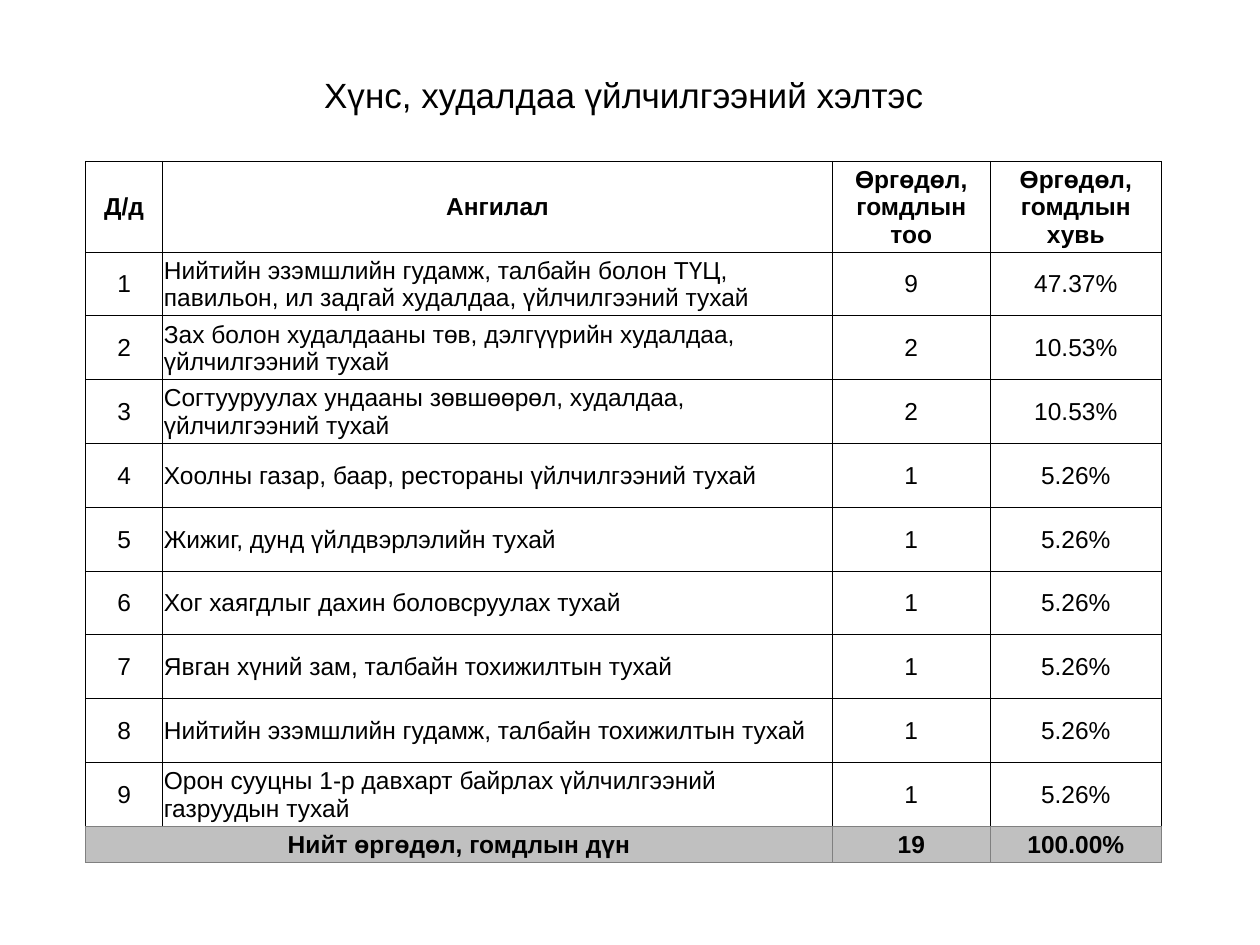
import dataclasses

import lxml.etree
import pptx
import pptx.dml.color
import pptx.enum.text
import pptx.oxml.ns
import pptx.util

Inches = pptx.util.Inches
Align = pptx.enum.text.PP_ALIGN
Anchor = pptx.enum.text.MSO_ANCHOR


@dataclasses.dataclass(frozen=True)
class Theme:
    font: str = "Arial"
    ink: str = "000000"
    paper: str = "FFFFFF"
    band: str = "C0C0C0"
    edge: str = "808080"
    title: int = 20
    body: int = 14
    line: float = 0.5


THEME = Theme()
WIDTH, HEIGHT = 10, 7.5
TITLE = "Хүнс, худалдаа үйлчилгээний хэлтэс "
HEADS = ("Д/д", "Ангилал", "Өргөдөл, гомдлын тоо", "Өргөдөл, гомдлын хувь")
TOTAL = "Нийт өргөдөл, гомдлын дүн"
TOPICS = (
    ("Нийтийн эзэмшлийн гудамж, талбайн болон ТҮЦ, павильон, ил задгай "
     "худалдаа, үйлчилгээний тухай", 9),
    ("Зах болон худалдааны төв, дэлгүүрийн худалдаа, үйлчилгээний тухай", 2),
    ("Согтууруулах ундааны зөвшөөрөл, худалдаа, үйлчилгээний тухай", 2),
    ("Хоолны газар, баар, рестораны үйлчилгээний тухай", 1),
    ("Жижиг, дунд үйлдвэрлэлийн тухай", 1),
    ("Хог хаягдлыг дахин боловсруулах тухай", 1),
    ("Явган хүний зам, талбайн тохижилтын тухай", 1),
    ("Нийтийн эзэмшлийн гудамж, талбайн тохижилтын тухай", 1),
    ("Орон сууцны 1-р давхарт байрлах үйлчилгээний газруудын тухай", 1),
)
COLS = (0.61, 5.31, 1.25, 1.36)
HEAD_ROW, TOTAL_ROW = 0.72, 0.29


def write(frame, text, size, bold=False, align=Align.CENTER):
    frame.text = text
    par = frame.paragraphs[0]
    par.alignment = align
    for run in par.runs:
        run.font.name = THEME.font
        run.font.size = pptx.util.Pt(size)
        run.font.bold = bold
        run.font.color.rgb = pptx.dml.color.RGBColor.from_string(THEME.ink)


def border(cell, color, base):
    """Draw all four sides in color, except the bottom one in base."""
    props = cell._tc.get_or_add_tcPr()
    qn = pptx.oxml.ns.qn
    for side in "LRTB":
        line = lxml.etree.SubElement(props, qn("a:ln" + side))
        line.set("w", str(pptx.util.Pt(THEME.line)))
        fill = lxml.etree.SubElement(line, qn("a:solidFill"))
        tone = lxml.etree.SubElement(fill, qn("a:srgbClr"))
        tone.set("val", base if side == "B" else color)


def style(cell, fill, color, base):
    cell.margin_left = cell.margin_right = cell.margin_top = Inches(0.01)
    cell.margin_bottom = 0
    cell.vertical_anchor = Anchor.MIDDLE
    border(cell, color, base)
    cell.fill.solid()
    cell.fill.fore_color.rgb = pptx.dml.color.RGBColor.from_string(fill)


def add_title(slide, left, top, width, height):
    box = slide.shapes.add_textbox(*map(Inches, (left, top, width, height)))
    frame = box.text_frame
    frame.word_wrap = True
    frame.vertical_anchor = Anchor.MIDDLE
    write(frame, TITLE, THEME.title)
    frame.paragraphs[0].line_spacing = 0.9


def list_rows():
    """Return the heads, the numbered topics with their shares, and the total."""
    total = sum(count for _, count in TOPICS)
    body = [(str(num), topic, str(count), f"{count / total:.2%}")
            for num, (topic, count) in enumerate(TOPICS, 1)]
    return [HEADS, *body, (TOTAL, "", str(total), f"{1:.2%}")]


def add_grid(slide, left, top, width, height):
    rows = list_rows()
    last = len(rows) - 1
    box = map(Inches, (left, top, width, height))
    grid = slide.shapes.add_table(len(rows), len(COLS), *box).table
    grid.first_row = grid.horz_banding = False

    for col, share in zip(grid.columns, COLS):
        col.width = Inches(width * share / sum(COLS))
    step = (height - HEAD_ROW - TOTAL_ROW) / len(TOPICS)
    tall = [HEAD_ROW] + [step] * len(TOPICS) + [TOTAL_ROW]
    for row, size in zip(grid.rows, tall):
        row.height = Inches(size)

    grid.cell(last, 0).merge(grid.cell(last, 1))
    for r, texts in enumerate(rows):
        fill = THEME.band if r == last else THEME.paper
        color = THEME.edge if r == last else THEME.ink
        base = THEME.edge if r >= last - 1 else THEME.ink
        for c, text in enumerate(texts):
            cell = grid.cell(r, c)
            style(cell, fill, color, base)
            if cell.is_spanned:
                continue
            topic = c == 1 and 0 < r < last
            write(cell.text_frame, text, THEME.body, bold=r in (0, last),
                  align=Align.LEFT if topic else Align.CENTER)


def main():
    deck = pptx.Presentation()
    deck.slide_width, deck.slide_height = Inches(WIDTH), Inches(HEIGHT)
    slide = deck.slides.add_slide(deck.slide_layouts[6])
    add_title(slide, 0.68, 0.39, 8.62, 0.76)
    add_grid(slide, 0.68, 1.28, 8.54, 5.57)
    deck.save("out.pptx")


if __name__ == "__main__":
    main()
